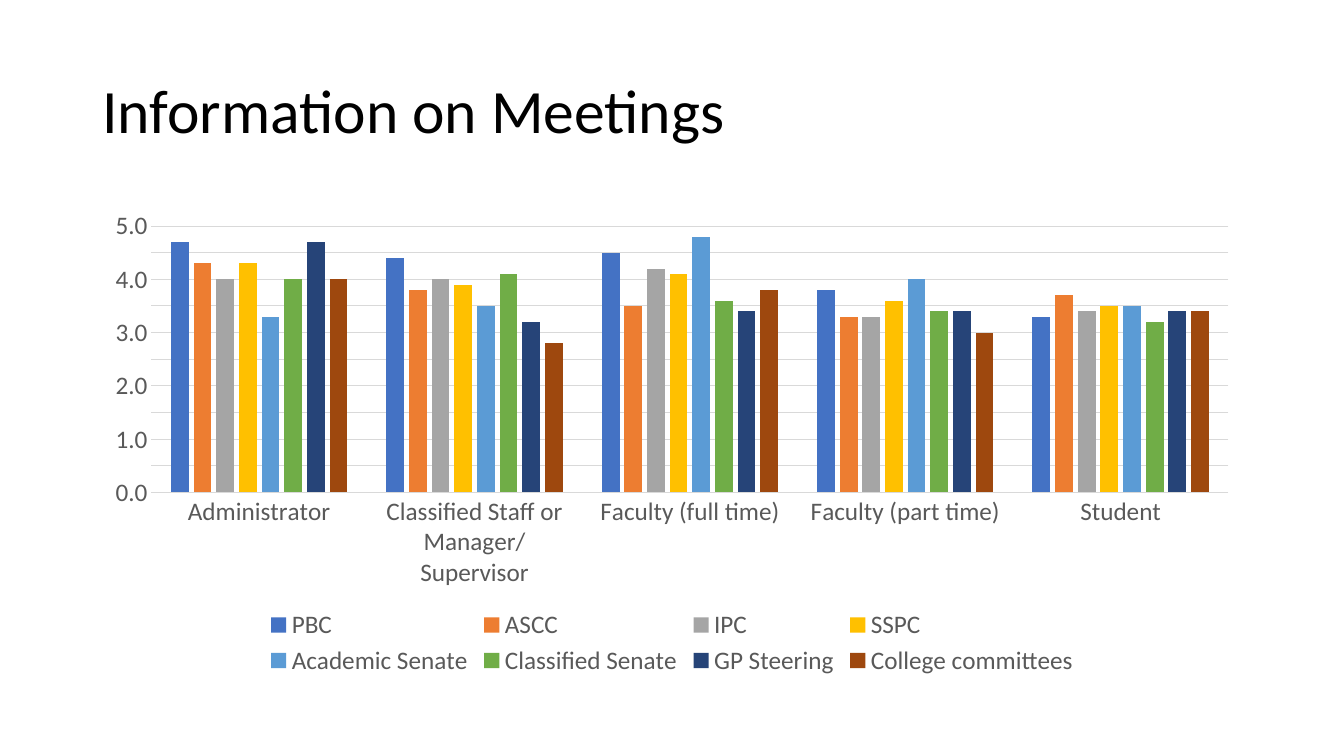
"""Build a slide charting how groups rate information on meetings."""
from copy import deepcopy

from pptx import Presentation
from pptx.chart.data import CategoryChartData
from pptx.dml.color import RGBColor
from pptx.enum.chart import XL_CHART_TYPE, XL_LEGEND_POSITION, XL_TICK_MARK
from pptx.enum.text import MSO_ANCHOR
from pptx.oxml.ns import qn
from pptx.util import Pt

TITLE = "Information on Meetings"
GROUPS = [
    "Administrator",
    "Classified Staff or Manager/Supervisor",
    "Faculty (full time)",
    "Faculty (part time)",
    "Student",
]
RATINGS = [
    ("PBC", "4472C4", (4.7, 4.4, 4.5, 3.8, 3.3)),
    ("ASCC", "ED7D31", (4.3, 3.8, 3.5, 3.3, 3.7)),
    ("IPC", "A5A5A5", (4.0, 4.0, 4.2, 3.3, 3.4)),
    ("SSPC", "FFC000", (4.3, 3.9, 4.1, 3.6, 3.5)),
    ("Academic Senate", "5B9BD5", (3.3, 3.5, 4.8, 4.0, 3.5)),
    ("Classified Senate", "70AD47", (4.0, 4.1, 3.6, 3.4, 3.2)),
    ("GP Steering", "264478", (4.7, 3.2, 3.4, 3.4, 3.4)),
    ("College committees", "9E480E", (4.0, 2.8, 3.8, 3.0, 3.4)),
]
THEME = {
    "font": "Calibri",
    "title_size": 44,
    "label_size": 18,
    "title": "000000",
    "label": "595959",
    "grid": "D9D9D9",
    "grid_width": 0.75,
}
SLIDE_WIDTH, SLIDE_HEIGHT = 960, 540
MARGIN = 66
CONTENT_WIDTH = SLIDE_WIDTH - 2 * MARGIN
TITLE_TOP, TITLE_HEIGHT = 28.75, 104.4
CHART_TOP, CHART_HEIGHT = 143.75, 342.6


def style_font(font, size, color):
    font.name = THEME["font"]
    font.size = Pt(THEME[size])
    font.color.rgb = RGBColor.from_string(THEME[color])


def style_line(line):
    line.color.rgb = RGBColor.from_string(THEME["grid"])
    line.width = Pt(THEME["grid_width"])


def add_title(slide):
    shape = slide.shapes.add_textbox(
        Pt(MARGIN), Pt(TITLE_TOP), Pt(CONTENT_WIDTH), Pt(TITLE_HEIGHT))
    frame = shape.text_frame
    frame.word_wrap = True
    frame.vertical_anchor = MSO_ANCHOR.MIDDLE
    paragraph = frame.paragraphs[0]
    paragraph.line_spacing = 0.9
    run = paragraph.add_run()
    run.text = TITLE
    style_font(run.font, "title_size", "title")


def style_gridlines(axis):
    axis.has_major_gridlines = True
    axis.has_minor_gridlines = True
    style_line(axis.major_gridlines.format.line)
    major = axis._element.find(qn("c:majorGridlines"))
    minor = axis._element.find(qn("c:minorGridlines"))
    minor.append(deepcopy(major.find(qn("c:spPr"))))


def style_axes(chart):
    for axis in (chart.category_axis, chart.value_axis):
        axis.major_tick_mark = XL_TICK_MARK.NONE
        axis.minor_tick_mark = XL_TICK_MARK.NONE
        style_font(axis.tick_labels.font, "label_size", "label")
    style_line(chart.category_axis.format.line)
    values = chart.value_axis
    values.minimum_scale, values.maximum_scale = 0, 5
    values.major_unit, values.minor_unit = 1, 0.5
    style_gridlines(values)
    values.format.line.fill.background()
    values.tick_labels.number_format = "0.0"
    values.tick_labels.number_format_is_linked = False


def add_rating_chart(slide):
    data = CategoryChartData(number_format="0.0")
    data.categories = GROUPS
    for name, _, ratings in RATINGS:
        data.add_series(name, ratings)
    chart = slide.shapes.add_chart(
        XL_CHART_TYPE.COLUMN_CLUSTERED, Pt(MARGIN), Pt(CHART_TOP),
        Pt(CONTENT_WIDTH), Pt(CHART_HEIGHT), data).chart
    style_font(chart.font, "label_size", "label")
    chart.has_title = False
    plot = chart.plots[0]
    plot.gap_width, plot.overlap = 219, -27
    plot.vary_by_categories = False
    for series, (_, color, _) in zip(plot.series, RATINGS):
        series.format.fill.solid()
        series.format.fill.fore_color.rgb = RGBColor.from_string(color)
    style_axes(chart)
    chart.has_legend = True
    chart.legend.position = XL_LEGEND_POSITION.BOTTOM
    chart.legend.include_in_layout = False
    style_font(chart.legend.font, "label_size", "label")


def main():
    presentation = Presentation()
    presentation.slide_width = Pt(SLIDE_WIDTH)
    presentation.slide_height = Pt(SLIDE_HEIGHT)
    slide = presentation.slides.add_slide(presentation.slide_layouts[6])
    add_title(slide)
    add_rating_chart(slide)
    presentation.save("out.pptx")


if __name__ == "__main__":
    main()
